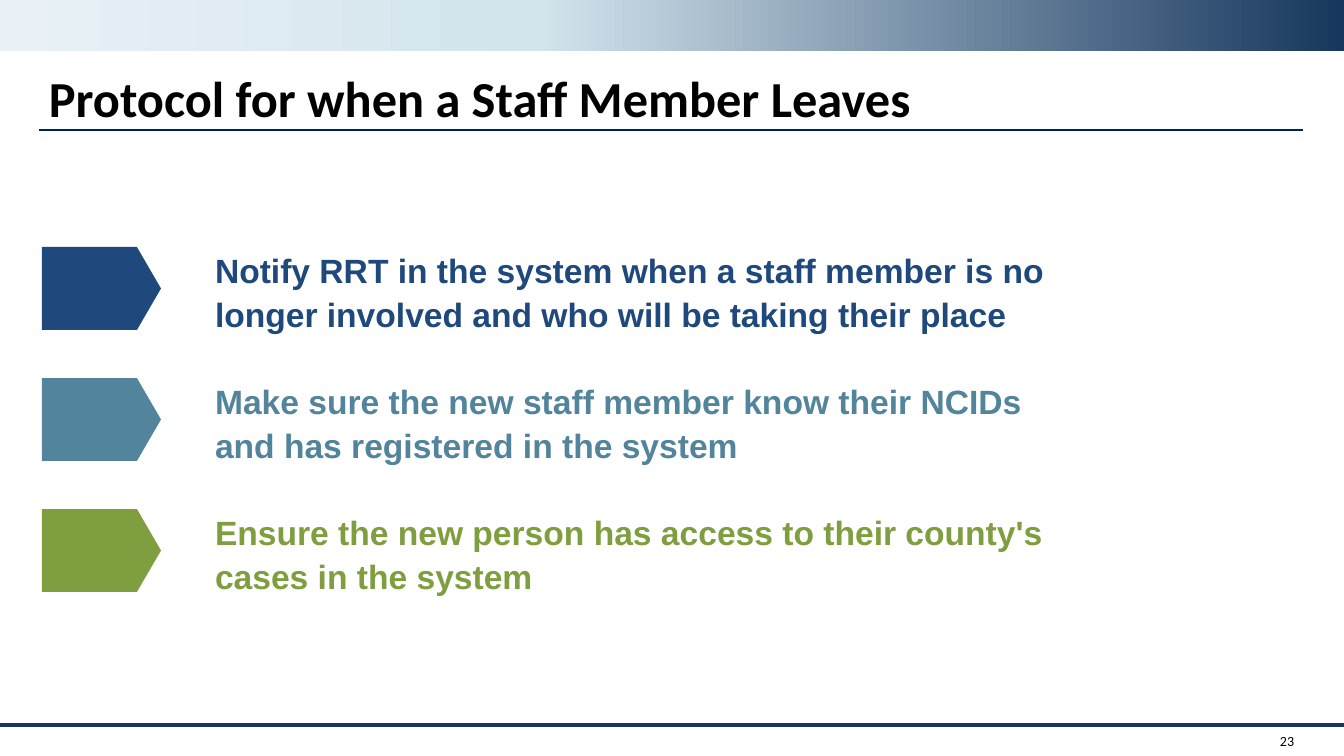
import copy

import lxml.etree
import pptx
import pptx.dml.color
import pptx.enum.shapes
import pptx.enum.text
import pptx.oxml.ns
import pptx.util

PX = 914400 / 100.8
COLORS = {
    "black": "000000",
    "navy": "17375E",
    "rule": "002060",
    "sky": "D3E4ED",
    "mist": "E9F1F6",
    "blue": "1F497D",
    "teal": "52849C",
    "green": "7F9E3F",
}
STEPS = [
    ("Notify RRT in the system when a staff member is no longer involved "
     "and who will be taking their place", "blue"),
    ("Make sure the new staff member know their NCIDs and has registered "
     "in the system", "teal"),
    ("Ensure the new person has access to their county's cases in the system",
     "green"),
]
STEP_TOP = 247
STEP_PITCH = 131


def px(*lengths):
    return [pptx.util.Emu(round(n * PX)) for n in lengths]


def rgb(name):
    return pptx.dml.color.RGBColor.from_string(COLORS[name])


def add_block(slide, kind, box):
    s = slide.shapes.add_shape(kind, *px(*box))
    s.shadow.inherit = False
    s.line.fill.background()
    return s


def add_banner(slide):
    s = add_block(slide, pptx.enum.shapes.MSO_SHAPE.RECTANGLE, (0, 0, 1344, 51))
    s.fill.gradient()
    s.fill.gradient_angle = 180
    stop_list = s._element.spPr.find(".//" + pptx.oxml.ns.qn("a:gsLst"))
    stop_list.insert(1, copy.deepcopy(stop_list[0]))
    stops = [(0, "navy"), (0.6, "sky"), (1, "mist")]
    for stop, (position, color) in zip(s.fill.gradient_stops, stops):
        stop.position = position
        stop.color.rgb = rgb(color)


def add_rule(slide, left, right, y, color, width):
    line = slide.shapes.add_connector(
        pptx.enum.shapes.MSO_CONNECTOR.STRAIGHT, *px(left, y, right, y))
    line.line.color.rgb = rgb(color)
    line.line.width = pptx.util.Pt(width)
    lxml.etree.SubElement(line._element.spPr, pptx.oxml.ns.qn("a:effectLst"))


def add_text(slide, text, box, font, size, color, bold=False, spacing=1.0,
             align="LEFT", anchor="MIDDLE", inset=True):
    tf = slide.shapes.add_textbox(*px(*box)).text_frame
    tf.word_wrap = True
    tf.vertical_anchor = pptx.enum.text.MSO_ANCHOR[anchor]
    if not inset:
        tf.margin_left = tf.margin_top = tf.margin_right = tf.margin_bottom = 0
    tf.text = text
    p = tf.paragraphs[0]
    p.alignment = pptx.enum.text.PP_ALIGN[align]
    p.line_spacing = spacing
    r = p.runs[0]
    r.font.name = font
    r.font.size = pptx.util.Pt(size)
    r.font.bold = bold
    r.font.color.rgb = rgb(color)


def add_step(slide, top, text, color):
    s = add_block(slide, pptx.enum.shapes.MSO_SHAPE.PENTAGON, (42, top, 119, 83))
    s.adjustments[0] = 0.29
    s.fill.solid()
    s.fill.fore_color.rgb = rgb(color)
    add_text(slide, text, (215, top, 845, 86), "Arial", 24, color,
             bold=True, spacing=1.1, inset=False)


def main():
    prs = pptx.Presentation()
    prs.slide_width, prs.slide_height = px(1344, 756)
    slide = prs.slides.add_slide(prs.slide_layouts[6])

    add_banner(slide)
    add_rule(slide, 0, 1344, 725, "navy", 2.25)
    add_rule(slide, 39, 1303, 130, "rule", 2)
    add_text(slide, "23", (1221, 725, 83, 31), "Calibri", 10, "black",
             align="RIGHT")
    add_text(slide, "Protocol for when a Staff Member Leaves",
             (39, 69, 1153, 60), "Calibri", 36, "black",
             bold=True, spacing=0.9, anchor="TOP")
    for i, (text, color) in enumerate(STEPS):
        add_step(slide, STEP_TOP + i * STEP_PITCH, text, color)

    prs.save("out.pptx")


if __name__ == "__main__":
    main()
